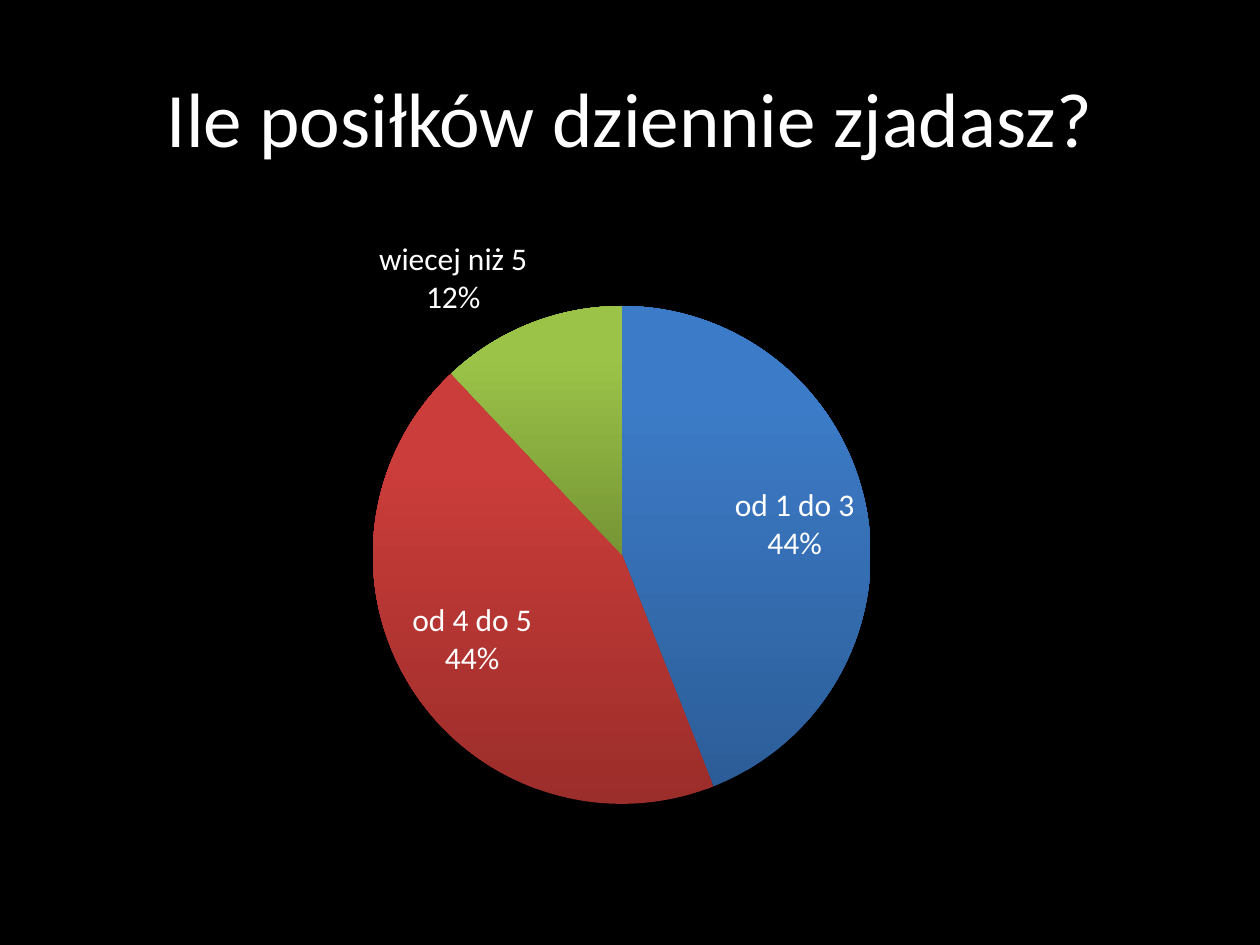
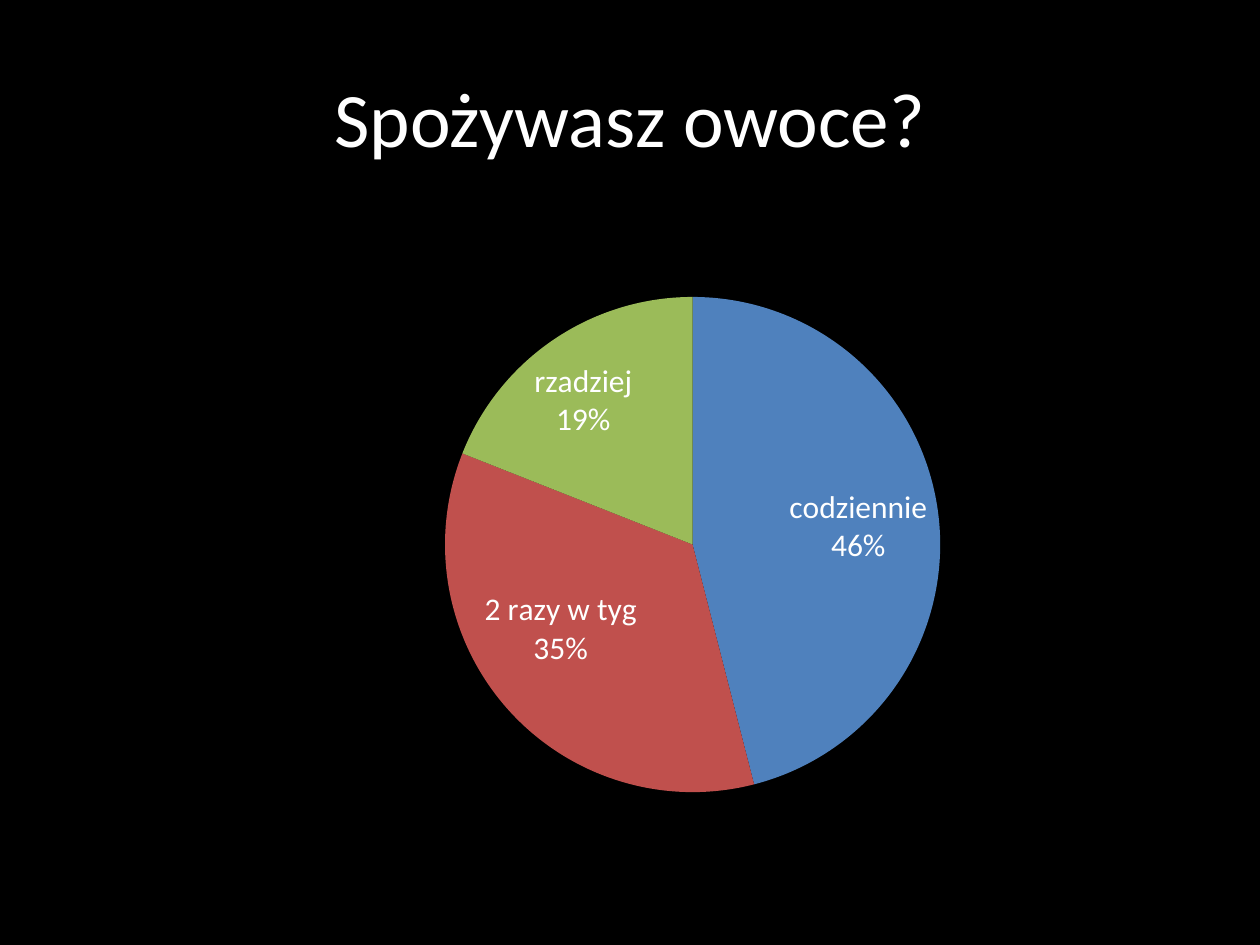
import pptx
import pptx.chart.data
import pptx.dml.color
import pptx.enum.chart
import pptx.enum.text
import pptx.util
from lxml import etree

Pt = pptx.util.Pt
COLORS = {
    "background": "000000",
    "text": "FFFFFF",
    "blue": "4F81BD",
    "red": "C0504D",
    "green": "9BBB59",
}
FLAT_SLICES = [(COLORS[name],) for name in ("blue", "red", "green")]
SHADED_SLICES = [("2C5D98", "3C7BC7"), ("9B2D2A", "CB3D3A"), ("769535", "9BC348")]
SURVEY = [
    {
        "title": "Ile posiłków dziennie zjadasz?",
        "answers": {"od 1 do 3": 44, "od 4 do 5": 44, "wiecej niż 5": 12},
        "frame": (36.7, 122.4, 648, 356.4),
        "pie": (176.4, 52.5, 284.5),
        "slices": SHADED_SLICES,
    },
    {
        "title": "Spożywasz owoce?",
        "answers": {"codziennie": 46, "2 razy w tyg": 35, "rzadziej": 19},
        "frame": (36, 126, 648, 356.4),
        "pie": (218.3, 43.7, 283),
        "slices": FLAT_SLICES,
    },
]


def rgb(value):
    return pptx.dml.color.RGBColor.from_string(value)


def assign(target, values):
    for name, value in values.items():
        setattr(target, name, value)


class SurveyDeck:
    """Builds survey slides that share one dark style."""

    font_name = "Calibri"
    title_box = {"left": Pt(36), "top": Pt(21.6), "width": Pt(648), "height": Pt(90)}

    def __init__(self):
        self.presentation = pptx.Presentation()
        assign(self.presentation, {"slide_width": Pt(720), "slide_height": Pt(540)})
        self.slide = None

    def format_font(self, font, size):
        assign(font, {"name": self.font_name, "size": Pt(size), "bold": False})
        font.color.rgb = rgb(COLORS["text"])

    def add_slide(self):
        layout = self.presentation.slide_layouts.get_by_name("Title Only")
        self.slide = self.presentation.slides.add_slide(layout)
        fill = self.slide.background.fill
        fill.solid()
        fill.fore_color.rgb = rgb(COLORS["background"])

    def add_title(self, text):
        title = self.slide.shapes.title
        assign(title, self.title_box)
        frame = title.text_frame
        assign(frame, {
            "text": text,
            "word_wrap": True,
            "vertical_anchor": pptx.enum.text.MSO_ANCHOR.MIDDLE,
        })
        paragraph = frame.paragraphs[0]
        paragraph.alignment = pptx.enum.text.PP_ALIGN.CENTER
        self.format_font(paragraph.runs[0].font, 44)

    def add_pie(self, answers, frame, pie, slices):
        data = pptx.chart.data.CategoryChartData()
        data.categories = list(answers)
        data.add_series("Series 1", list(answers.values()))
        chart = self.slide.shapes.add_chart(
            pptx.enum.chart.XL_CHART_TYPE.PIE, *map(Pt, frame), data
        ).chart
        assign(chart, {"has_title": False, "has_legend": False})
        self.format_font(chart.font, 18)
        plot = chart.plots[0]
        assign(plot, {"vary_by_categories": True, "has_data_labels": True})
        labels = plot.data_labels
        assign(labels, {
            "show_category_name": True,
            "show_percentage": True,
            "show_value": False,
            "number_format": "0%",
            "number_format_is_linked": False,
            "position": pptx.enum.chart.XL_LABEL_POSITION.BEST_FIT,
        })
        self.format_font(labels.font, 18)
        for index, colors in enumerate(slices):
            self.fill_slice(plot.series[0].points[index].format, colors)
        self.place_pie(chart, frame, pie)

    def fill_slice(self, slice_format, colors):
        slice_format.line.fill.background()
        fill = slice_format.fill
        if len(colors) == 1:
            fill.solid()
            fill.fore_color.rgb = rgb(colors[0])
            return
        fill.gradient()
        fill.gradient_angle = 90
        for stop, color, position in zip(fill.gradient_stops, colors, (0, 0.8)):
            stop.color.rgb = rgb(color)
            stop.position = position

    def place_pie(self, chart, frame, pie):
        width, height = frame[2:]
        left, top, diameter = pie
        plot_area = chart.element.chart.plotArea
        namespace = etree.QName(plot_area).namespace
        for old_layout in plot_area.findall(f"{{{namespace}}}layout"):
            plot_area.remove(old_layout)
        layout = etree.Element(f"{{{namespace}}}layout")
        manual = etree.SubElement(layout, f"{{{namespace}}}manualLayout")
        settings = {
            "layoutTarget": "inner",
            "xMode": "edge",
            "yMode": "edge",
            "x": left / width,
            "y": top / height,
            "w": diameter / width,
            "h": diameter / height,
        }
        for tag, value in settings.items():
            etree.SubElement(manual, f"{{{namespace}}}{tag}", val=str(value))
        plot_area.insert(0, layout)


def main():
    deck = SurveyDeck()
    for question in SURVEY:
        deck.add_slide()
        deck.add_title(question["title"])
        deck.add_pie(
            question["answers"], question["frame"], question["pie"], question["slices"]
        )
    deck.presentation.save("out.pptx")


if __name__ == "__main__":
    main()
